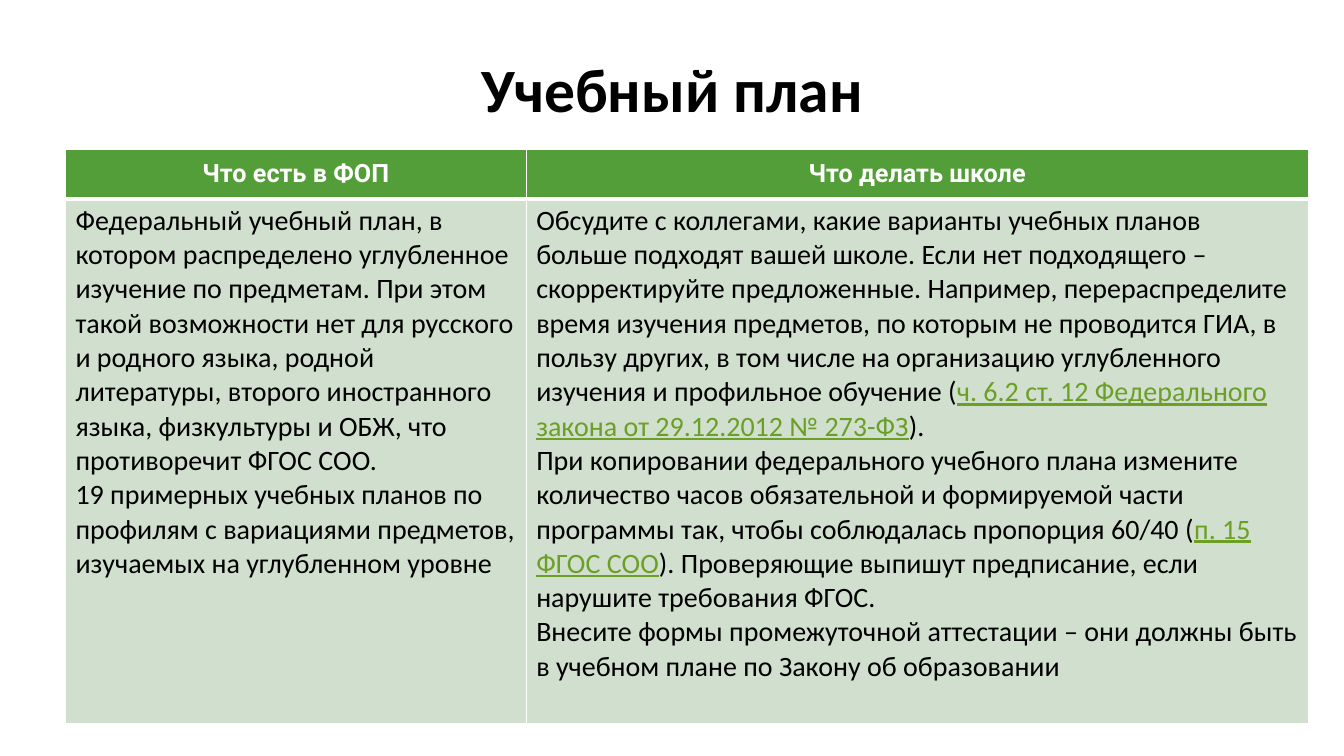
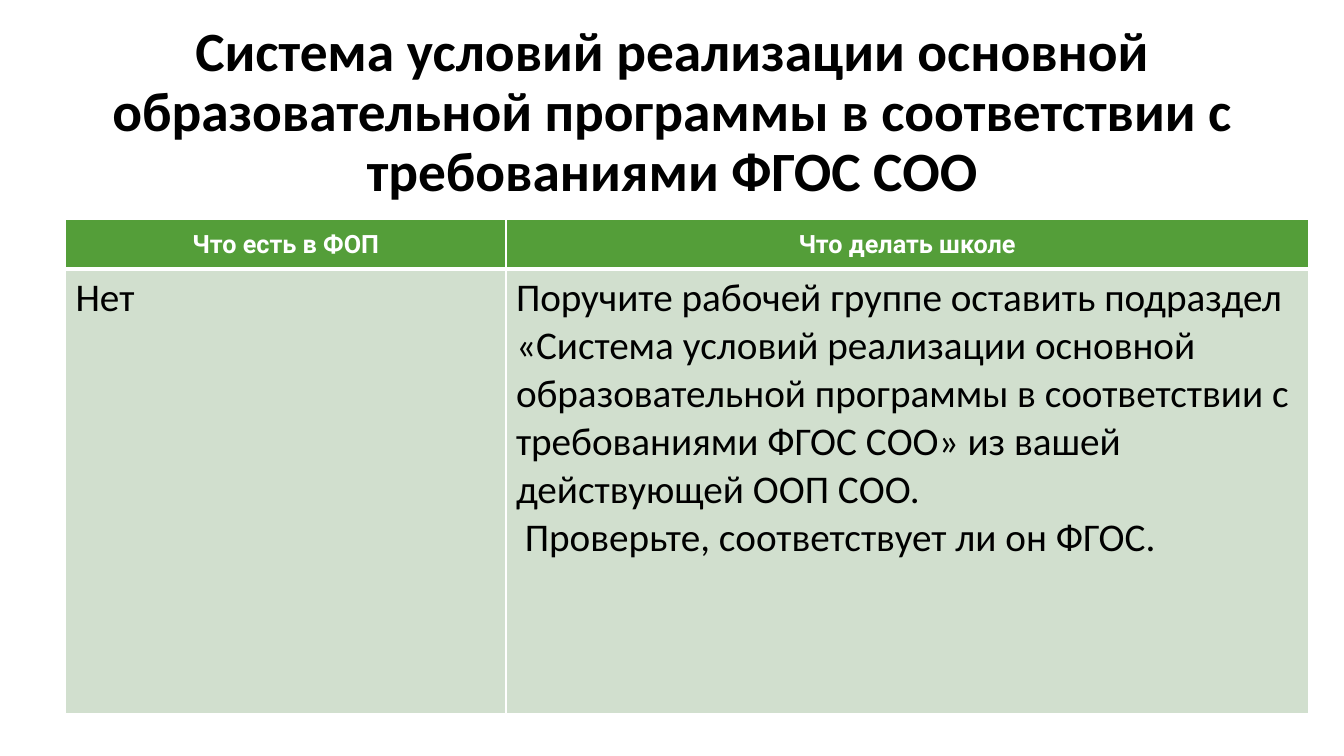
"""Build two slides that compare the federal programme with the school's tasks."""
import dataclasses

import lxml.etree
import pptx
import pptx.dml.color
import pptx.enum.text
import pptx.oxml.ns
import pptx.util

Cm, Pt = pptx.util.Cm, pptx.util.Pt
RGB = pptx.dml.color.RGBColor.from_string
ALIGN = pptx.enum.text.PP_ALIGN


@dataclasses.dataclass(frozen=True)
class Theme:
    """Colours, fonts, type sizes and shared measures in centimetres."""
    text: str = "000000"
    white: str = "FFFFFF"
    header: str = "549E39"
    body: str = "D1DFCE"
    link: str = "6B9F25"
    font: str = "Calibri"
    header_font: str = "Roboto"
    header_size: float = 18
    thin: float = 1
    thick: float = 3
    title_left: float = 2.34
    title_width: float = 29.21
    table_left: float = 1.65
    table_width: float = 31.32
    header_height: float = 1.24
    header_inset: float = 0.25


THEME = Theme()
HEADERS = ("Что есть в ФОП", "Что делать школе")


def style_run(r, font, size, color, bold=False):
    """Format one run."""
    r.font.name = font
    r.font.size = Pt(size)
    r.font.bold = bold
    r.font.color.rgb = RGB(color)


def add_title(slide, text, top, height, size):
    """Place and format the title placeholder."""
    sp = slide.shapes.title
    sp.left, sp.top = Cm(THEME.title_left), Cm(top)
    sp.width, sp.height = Cm(THEME.title_width), Cm(height)
    tf = sp.text_frame
    tf.text = text
    tf.word_wrap = True
    tf.auto_size = pptx.enum.text.MSO_AUTO_SIZE.NONE
    tf.vertical_anchor = pptx.enum.text.MSO_ANCHOR.MIDDLE
    p = tf.paragraphs[0]
    p.alignment = ALIGN.CENTER
    p.line_spacing = 0.9
    style_run(p.runs[0], THEME.font, size, THEME.text, bold=True)


def set_cell_style(cell, fill, top, bottom):
    """Give a cell white borders and a solid fill."""
    qn = pptx.oxml.ns.qn
    tc_pr = cell._tc.get_or_add_tcPr()
    widths = {"L": THEME.thin, "R": THEME.thin, "T": top, "B": bottom}
    for side, width in widths.items():
        ln = lxml.etree.SubElement(tc_pr, qn(f"a:ln{side}"), w=str(Pt(width)))
        solid = lxml.etree.SubElement(ln, qn("a:solidFill"))
        lxml.etree.SubElement(solid, qn("a:srgbClr"), val=THEME.white)
    cell.fill.solid()
    cell.fill.fore_color.rgb = RGB(fill)


def fill_header(cell, text):
    """Write a centred header cell."""
    set_cell_style(cell, THEME.header, THEME.thin, THEME.thick)
    inset = Cm(THEME.header_inset)
    cell.margin_left = cell.margin_right = inset
    cell.margin_top = cell.margin_bottom = inset
    p = cell.text_frame.paragraphs[0]
    p.text = text
    p.alignment = ALIGN.CENTER
    style_run(p.runs[0], THEME.header_font, THEME.header_size, THEME.white, bold=True)


def fill_body(cell, paragraphs, size):
    """Write body paragraphs, where every second piece of one is link-styled."""
    set_cell_style(cell, THEME.body, THEME.thick, THEME.thin)
    tf = cell.text_frame
    for i, pieces in enumerate(paragraphs):
        p = tf.add_paragraph() if i else tf.paragraphs[0]
        p.alignment = ALIGN.LEFT
        for j, text in enumerate(pieces):
            is_link = j % 2 == 1
            r = p.add_run()
            r.text = text
            style_run(r, THEME.font, size, THEME.link if is_link else THEME.text)
            r.font.underline = is_link


def add_comparison(slide, top, first_width, body_height, size, bodies):
    """Add the two-column comparison table."""
    heights = (THEME.header_height, body_height)
    widths = (first_width, THEME.table_width - first_width)
    table = slide.shapes.add_table(
        len(heights), len(widths), Cm(THEME.table_left), Cm(top),
        Cm(THEME.table_width), Cm(sum(heights))).table
    table.horz_banding = False
    for row, height in zip(table.rows, heights):
        row.height = Cm(height)
    for i, (width, header, body) in enumerate(zip(widths, HEADERS, bodies)):
        table.columns[i].width = Cm(width)
        fill_header(table.cell(0, i), header)
        fill_body(table.cell(1, i), body, size)


def add_curriculum(slide):
    """Fill the curriculum slide."""
    add_title(slide, "Учебный план", 0.61, 3.45, 44)
    programme = [
        ("Федеральный учебный план, в котором распределено углубленное изучение "
         "по предметам. При этом такой возможности нет для русского и родного "
         "языка, родной литературы, второго иностранного языка, физкультуры и "
         "ОБЖ, что противоречит ФГОС СОО.",),
        ("19 примерных учебных планов по профилям с вариациями предметов, "
         "изучаемых на углубленном уровне",),
    ]
    tasks = [
        ("Обсудите с коллегами, какие варианты учебных планов больше подходят "
         "вашей школе. Если нет подходящего – скорректируйте предложенные. "
         "Например, перераспределите время изучения предметов, по которым не "
         "проводится ГИА, в пользу других, в том числе на организацию "
         "углубленного изучения и профильное обучение (",
         "ч. 6.2 ст. 12 Федерального закона от 29.12.2012 № 273-ФЗ", ")."),
        ("При копировании федерального учебного плана измените количество часов "
         "обязательной и формируемой части программы так, чтобы соблюдалась "
         "пропорция 60/40 (", "п. 15 ФГОС СОО",
         "). Проверяющие выпишут предписание, если нарушите требования ФГОС."),
        ("Внесите формы промежуточной аттестации – они должны быть в учебном "
         "плане по Закону об образовании",),
    ]
    add_comparison(slide, 3.76, 11.61, 13.22, 20, (programme, tasks))


def add_conditions(slide):
    """Fill the slide on the system of conditions."""
    add_title(slide, "Система условий реализации основной образовательной "
              "программы в соответствии с требованиями ФГОС СОО", 1.02, 3.68, 39.6)
    tasks = [
        ("Поручите рабочей группе оставить подраздел «Система условий реализации "
         "основной образовательной программы в соответствии с требованиями ФГОС "
         "СОО» из вашей действующей ООП СОО.",),
        (" Проверьте, соответствует ли он ФГОС.",),
    ]
    add_comparison(slide, 5.54, 11.1, 11.2, 28, ([("Нет",)], tasks))


def main():
    """Build and save the presentation."""
    prs = pptx.Presentation()
    prs.slide_width, prs.slide_height = Cm(33.87), Cm(19.05)
    title_only = prs.slide_layouts[5]
    for fill_slide in (add_curriculum, add_conditions):
        fill_slide(prs.slides.add_slide(title_only))
    prs.save("out.pptx")


if __name__ == "__main__":
    main()
